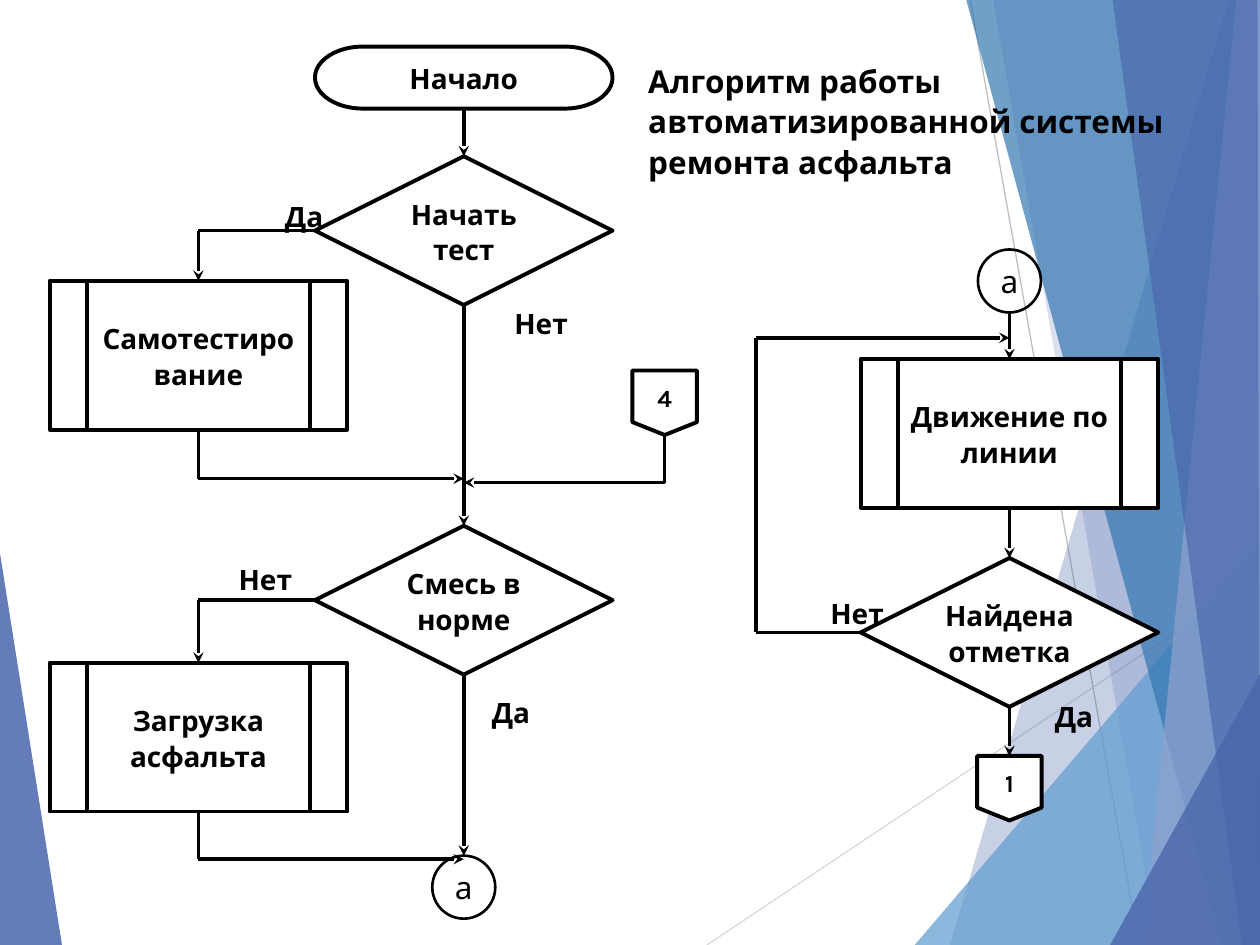
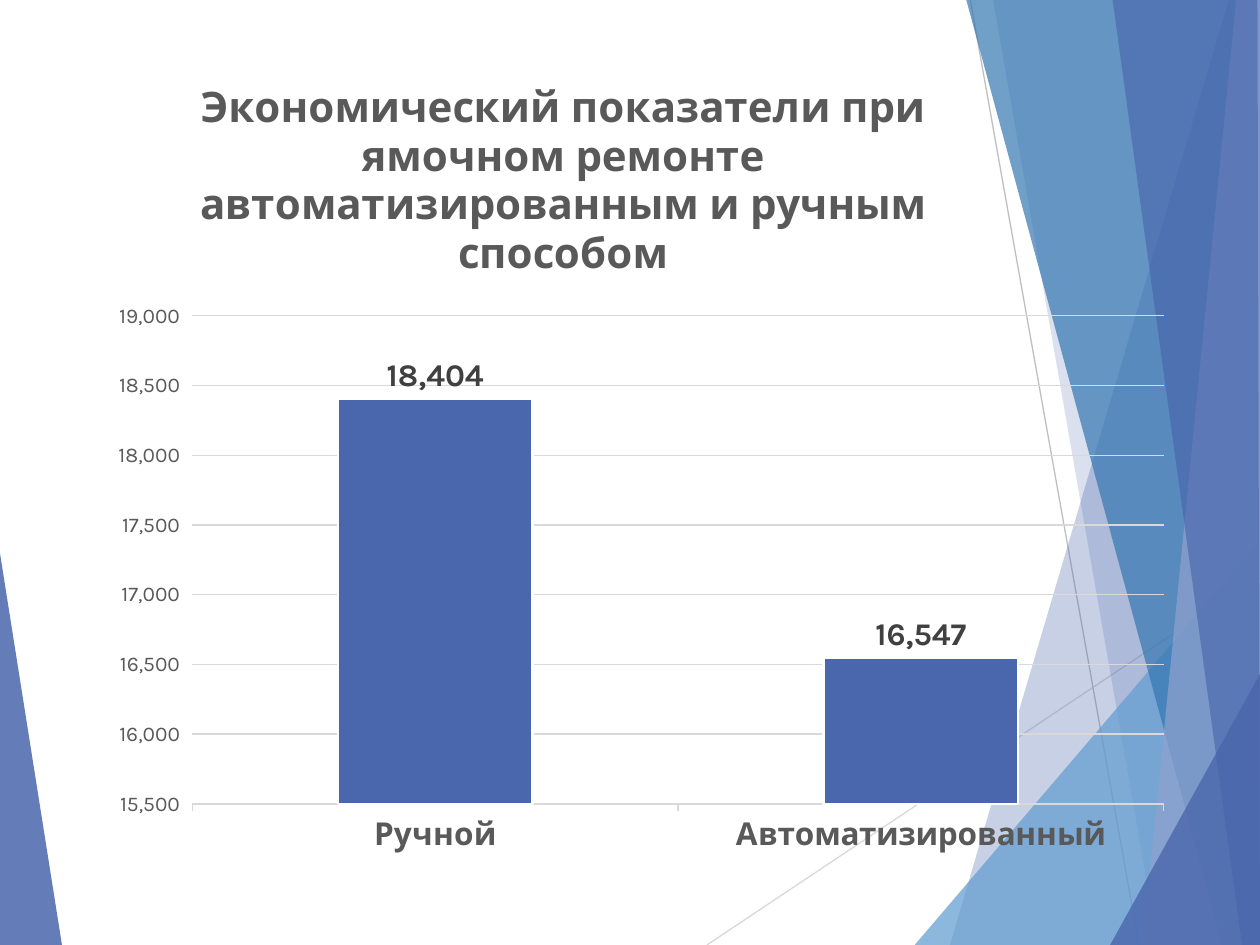
from dataclasses import dataclass
from itertools import pairwise

from lxml.etree import SubElement
from pptx import Presentation
from pptx.chart.data import CategoryChartData
from pptx.dml.color import RGBColor
from pptx.enum.chart import XL_CHART_TYPE as ChartType
from pptx.enum.chart import XL_LABEL_POSITION as LabelPosition
from pptx.enum.chart import XL_TICK_MARK as TickMark
from pptx.enum.shapes import MSO_CONNECTOR as Connector
from pptx.enum.shapes import MSO_SHAPE as Preset
from pptx.enum.text import MSO_ANCHOR as Anchor
from pptx.enum.text import PP_ALIGN as Align
from pptx.oxml import parse_xml
from pptx.oxml.ns import nsdecls, qn
from pptx.util import Cm, Pt

WIDTH, HEIGHT = 25.4, 19.05
FONT = "Karla"
BLACK, WHITE = "000000", "FFFFFF"
BLUE, SKY, OCEAN, LAVENDER = "4A66AC", "629DD1", "3477B2", "90A2CF"
GRID, GREY, DARK = "D9D9D9", "595959", "404040"
TOP, LEFT, BOTTOM, RIGHT = range(4)

LEFT_FACET = (BLUE, 85, [(0, 11.15), (1.25, HEIGHT), (0, HEIGHT)])
RAYS = [
    (GRID, (14.25, HEIGHT), (WIDTH, 11.61)),
    ("BFBFBF", (19.56, 0), (22.96, HEIGHT)),
]
RIGHT_FACETS = [
    (BLUE, 30, [(24.77, 0), (19.15, HEIGHT), (WIDTH, HEIGHT), (WIDTH, 0)]),
    (BLUE, 20, [(20.02, 0), (23.34, HEIGHT), (WIDTH, HEIGHT), (WIDTH, 0)]),
    (SKY, 72, [(18.44, HEIGHT), (WIDTH, 10.9), (WIDTH, HEIGHT)]),
    (OCEAN, 70, [(19.48, 0), (24.64, HEIGHT), (WIDTH, HEIGHT), (WIDTH, 0)]),
    (LAVENDER, 70, [(24.92, 0), (23.04, HEIGHT), (WIDTH, HEIGHT), (WIDTH, 0)]),
    (BLUE, 65, [(22.43, 0), (25.04, HEIGHT), (WIDTH, HEIGHT), (25.35, 0)]),
    (BLUE, 80, [(22.38, HEIGHT), (WIDTH, 13.59), (WIDTH, HEIGHT)]),
]


@dataclass
class Kind:
    """Look of one sort of flowchart node."""

    preset: int
    width: float
    height: float
    size: int = 16
    bold: bool = True
    outline: float = 2.25
    fill: str = WHITE
    padded: bool = True
    align: int = Align.CENTER
    spacing: float = 1.07


TERMINATOR = Kind(Preset.FLOWCHART_TERMINATOR, 6, 1.25)
PROCESS = Kind(Preset.FLOWCHART_PREDEFINED_PROCESS, 6, 3)
DECISION = Kind(Preset.FLOWCHART_DECISION, 6, 3, padded=False)
PAGE_LINK = Kind(Preset.FLOWCHART_OFFPAGE_CONNECTOR, 1.3, 1.3, size=14, padded=False)
JOINT = Kind(Preset.FLOWCHART_CONNECTOR, 1.27, 1.27, size=18, bold=False,
             outline=1.5, fill="", spacing=1)
ANSWER = Kind(Preset.FLOWCHART_PROCESS, 1.85, 1.47, outline=0, fill="")
HEADING = Kind(Preset.FLOWCHART_TERMINATOR, 13.77, 2.39, size=18, outline=0,
               fill="", padded=False, align=Align.LEFT)


def rgb(code):
    """Turn a hex string into a colour."""
    return RGBColor.from_string(code)


def paint(fill, code):
    """Fill with a solid colour, or with nothing for an empty string."""
    if code:
        fill.solid()
        fill.fore_color.rgb = rgb(code)
    else:
        fill.background()


def style_font(font, size, color, bold=False):
    """Set face, size, colour and weight of a font."""
    font.name, font.size, font.bold = FONT, Pt(size), bold
    font.color.rgb = rgb(color)


def draw_line(slide, start, end, color, width, arrow=False):
    """Draw a straight line between two points given in EMU."""
    line = slide.shapes.add_connector(Connector.STRAIGHT, *start, *end)
    line.line.width = Pt(width)
    paint(line.line.fill, color)
    properties = line.element.spPr
    if arrow:
        SubElement(properties.find(qn("a:ln")), qn("a:tailEnd"), type="stealth")
    SubElement(properties, qn("a:effectLst"))
    return line


@dataclass
class Region:
    """Part of a slide whose contents are placed from its top left corner."""

    slide: object
    left: float
    top: float

    def point(self, x, y):
        """Give a point of the region in slide units."""
        return Cm(self.left + x), Cm(self.top + y)

    def node(self, kind, text, axis, top):
        """Add a flowchart node centred on a vertical axis."""
        node = self.slide.shapes.add_shape(
            kind.preset, *self.point(axis - kind.width / 2, top),
            Cm(kind.width), Cm(kind.height))
        node.shadow.inherit = False
        paint(node.fill, kind.fill)
        paint(node.line.fill, BLACK if kind.outline else "")
        if kind.outline:
            node.line.width = Pt(kind.outline)
        frame = node.text_frame
        frame.text, frame.word_wrap = text, True
        frame.vertical_anchor = Anchor.MIDDLE
        if not kind.padded:
            frame.margin_left = frame.margin_right = 0
            frame.margin_top = frame.margin_bottom = 0
        for paragraph in frame.paragraphs:
            paragraph.alignment = kind.align
            paragraph.line_spacing = kind.spacing
            style_font(paragraph.font, kind.size, BLACK, kind.bold)
        return node

    def locate(self, stop):
        """Give the place of a stop, which is a point or a node with a side."""
        anchor, position = stop
        if isinstance(anchor, (int, float)):
            return self.point(anchor, position)
        across = {LEFT: 0, RIGHT: 2}.get(position, 1)
        down = {TOP: 0, BOTTOM: 2}.get(position, 1)
        return (anchor.left + anchor.width * across // 2,
                anchor.top + anchor.height * down // 2)

    def route(self, *stops):
        """Lead a path through the stops, with an arrowhead at the last."""
        for start, end in pairwise(stops):
            line = draw_line(self.slide, self.locate(start), self.locate(end),
                             BLACK, 2, arrow=end is stops[-1])
            if not isinstance(start[0], (int, float)):
                line.begin_connect(*start)
            if not isinstance(end[0], (int, float)):
                line.end_connect(*end)

    def facet(self, color, opacity, corners):
        """Add a translucent polygon."""
        start, *others = [self.point(*corner) for corner in corners]
        builder = self.slide.shapes.build_freeform(*start)
        builder.add_line_segments(others)
        facet = builder.convert_to_shape()
        facet.shadow.inherit = False
        paint(facet.fill, color)
        facet.line.fill.background()
        tint = facet.element.spPr.find(qn("a:solidFill"))[0]
        SubElement(tint, qn("a:alpha"), val=str(opacity * 1000))


def backdrop(master, slide, left, top):
    """Draw the facets and rays, then hand them to the master."""
    region = Region(slide, left, top)
    region.facet(*LEFT_FACET)
    for color, start, end in RAYS:
        draw_line(slide, region.point(*start), region.point(*end), color, 0.75)
    for facet in RIGHT_FACETS:
        region.facet(*facet)
    for number, part in enumerate(list(slide.shapes), 100):
        part.element.xpath("./*/p:cNvPr")[0].set("id", str(number))
        master.shapes.element.append(part.element)


def preparation_branch(slide, left, top):
    """Draw the branch from the start to the loaded mix."""
    region = Region(slide, left, top)
    side, axis, page_axis = 3, 8.35, 12.4
    start = region.node(TERMINATOR, "Начало", axis, 0)
    test = region.node(DECISION, "Начать тест", axis, 2.21)
    self_test = region.node(PROCESS, "Самотестирование", side, 4.72)
    page_four = region.node(PAGE_LINK, "4", page_axis, 6.53)
    mix = region.node(DECISION, "Смесь в норме", axis, 9.66)
    loading = region.node(PROCESS, "Загрузка асфальта", side, 12.42)
    joint = region.node(JOINT, "а", axis, 16.31)
    for answer, x, y in [("Да", 5.13, 2.67), ("Нет", 9.91, 4.83),
                         ("Нет", 4.35, 9.98), ("Да", 9.3, 12.67)]:
        region.node(ANSWER, answer, x, y)
    region.route((start, BOTTOM), (test, TOP))
    region.route((test, BOTTOM), (mix, TOP))
    region.route((mix, BOTTOM), (joint, TOP))
    region.route((test, LEFT), (side, 3.71), (self_test, TOP))
    region.route((mix, LEFT), (side, 11.16), (loading, TOP))
    region.route((self_test, BOTTOM), (side, 8.71), (axis, 8.71))
    region.route((page_four, BOTTOM), (page_axis, 8.79), (axis, 8.79))
    region.route((loading, BOTTOM), (side, 16.38), (axis, 16.38))


def search_branch(slide, left, top):
    """Draw the loop that follows the line until a mark is found."""
    region = Region(slide, left, top)
    axis, return_level = 5.11, 1.78
    joint = region.node(JOINT, "а", axis, 0)
    motion = region.node(PROCESS, "Движение по линии", axis, 2.21)
    mark = region.node(DECISION, "Найдена\nотметка", axis, 6.22)
    page_one = region.node(PAGE_LINK, "1", axis, 10.21)
    region.node(ANSWER, "Нет", 2.04, 6.58)
    region.node(ANSWER, "Да", 6.41, 8.66)
    for upper, lower in pairwise([joint, motion, mark, page_one]):
        region.route((upper, BOTTOM), (lower, TOP))
    region.route((mark, LEFT), (0, 7.72), (0, return_level), (axis, return_level))


def algorithm_slide(slide):
    """Compose the flowchart slide."""
    preparation_branch(slide, 1, 0.94)
    search_branch(slide, 15.24, 5.03)
    Region(slide, 12.42, 1.22).node(
        HEADING, "Алгоритм работы автоматизированной системы ремонта асфальта",
        HEADING.width / 2, 0)


def set_layout(parent, index, **places):
    """Give a chart part a manual layout in fractions of the chart."""
    for old in parent.findall(qn("c:layout")):
        parent.remove(old)
    layout = parse_xml(f"<c:layout {nsdecls('c')}><c:manualLayout/></c:layout>")
    for tag, value in places.items():
        SubElement(layout[0], qn(f"c:{tag}"), val=str(value))
    parent.insert(index, layout)


def cost_chart(slide, left, top, width, height):
    """Draw the column chart that compares the two repair methods."""
    costs = CategoryChartData(number_format="#,##0")
    costs.categories = ["Ручной", "Автоматизированный"]
    costs.add_series("Series 1", [18404, 16547])
    chart = slide.shapes.add_chart(
        ChartType.COLUMN_CLUSTERED, Cm(left), Cm(top), Cm(width), Cm(height),
        costs).chart
    style_font(chart.font, 10, BLACK)
    chart.has_legend = False

    title = chart.chart_title
    title.text_frame.text = ("Экономический показатели при ямочном ремонте "
                             "автоматизированным и ручным способом")
    style_font(title.text_frame.paragraphs[0].font, 24, GREY, True)
    set_layout(title.element, 1, xMode="edge", yMode="edge", x=0.09, y=0.02)
    plot_area = chart.element.find(f".//{qn('c:plotArea')}")
    set_layout(plot_area, 0, layoutTarget="inner", xMode="edge", yMode="edge",
               x=0.09, y=0.32, w=0.89, h=0.6)

    methods, scale = chart.category_axis, chart.value_axis
    style_font(methods.tick_labels.font, 18, GREY, True)
    style_font(scale.tick_labels.font, 12, GREY)
    methods.major_tick_mark = scale.major_tick_mark = TickMark.OUTSIDE
    scale.minimum_scale, scale.maximum_scale, scale.major_unit = 15500, 19000, 500
    scale.tick_labels.number_format = "#,##0"
    scale.tick_labels.number_format_is_linked = False
    scale.format.line.fill.background()
    for line in (methods.format.line, scale.major_gridlines.format.line):
        paint(line.fill, GRID)
        line.width = Pt(0.75)

    plot = chart.plots[0]
    plot.gap_width, plot.vary_by_categories = 150, False
    columns = plot.series[0]
    paint(columns.format.fill, BLUE)
    paint(columns.format.line.fill, WHITE)
    columns.format.line.width = Pt(1.5)
    labels = columns.data_labels
    labels.show_value, labels.position = True, LabelPosition.OUTSIDE_END
    labels.number_format, labels.number_format_is_linked = "#,##0", False
    style_font(labels.font, 18, DARK, True)


def main():
    """Build and save the presentation."""
    deck = Presentation()
    deck.slide_width, deck.slide_height = Cm(WIDTH), Cm(HEIGHT)
    blank = deck.slide_layouts[6]
    algorithm, economics = [deck.slides.add_slide(blank) for _ in range(2)]
    backdrop(deck.slide_master, algorithm, 0, 0)
    algorithm_slide(algorithm)
    cost_chart(economics, 1.9, 1.12, 22, 16.4)
    deck.save("out.pptx")


if __name__ == "__main__":
    main()
